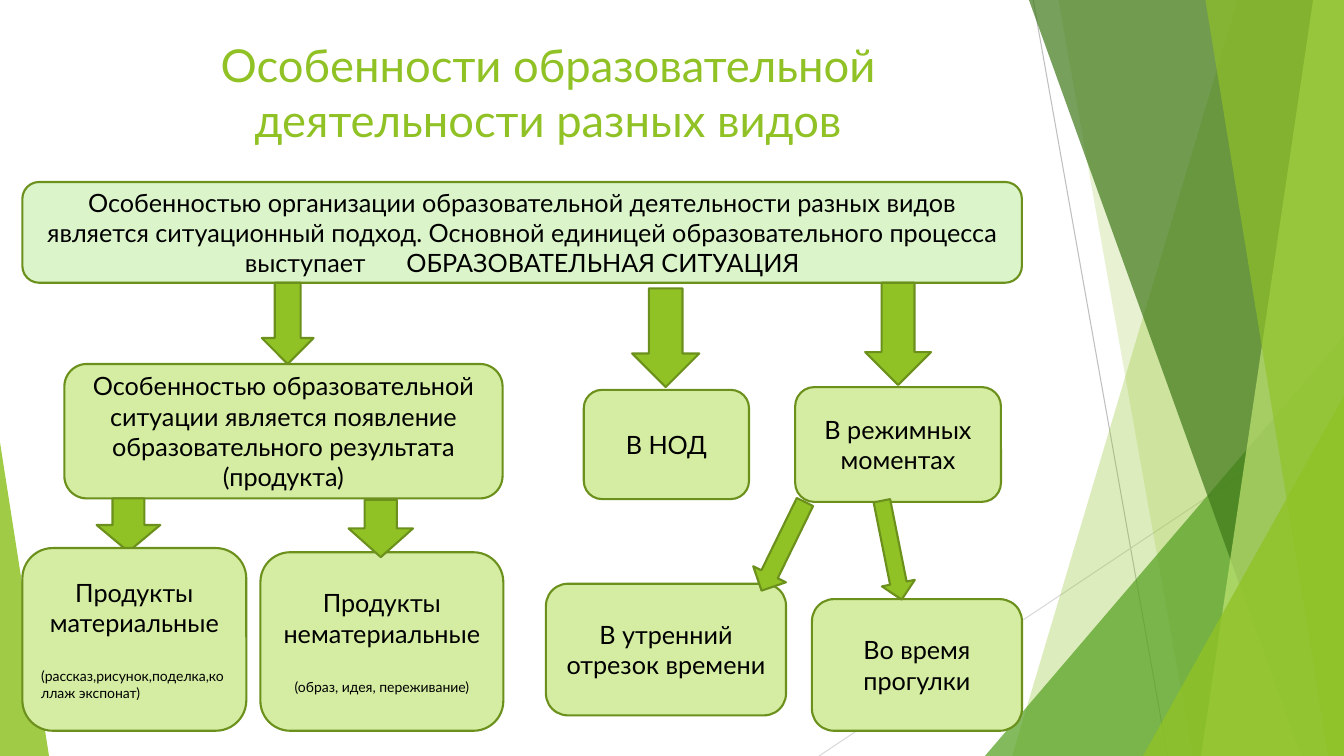
from dataclasses import dataclass
from typing import Any

from lxml import etree
from pptx import Presentation
from pptx.dml.color import RGBColor
from pptx.enum import shapes as sh, text as tx
from pptx.oxml import ns
from pptx.util import Pt

FONT = "Lato"
LEAF = RGBColor(0x90, 0xC2, 0x26)
MOSS = RGBColor(0x6B, 0x90, 0x1C)
LIME = RGBColor(0xD5, 0xED, 0xA2)
MINT = RGBColor(0xDB, 0xF4, 0xCA)
GRASS = RGBColor(0x54, 0xA0, 0x21)
PINE = RGBColor(0x3F, 0x78, 0x19)
PALE = RGBColor(0xC0, 0xE4, 0x74)
GREY = RGBColor(0xBF, 0xBF, 0xBF)
MIST = RGBColor(0xD9, 0xD9, 0xD9)
BLACK = RGBColor(0, 0, 0)
WIDE, HIGH = 960, 540
MID, JUST = tx.PP_ALIGN.CENTER, tx.PP_ALIGN.JUSTIFY
KIND = sh.MSO_SHAPE


@dataclass
class Ray:
    start: tuple[float, float]
    end: tuple[float, float]
    tint: RGBColor


@dataclass
class Band:
    top: float
    base: float
    tint: RGBColor
    alpha: int


@dataclass
class Wedge:
    left: float
    top: float
    width: float
    peak: float
    tint: RGBColor
    alpha: int


@dataclass
class Box:
    left: float
    top: float
    width: float
    height: float
    lines: tuple[str, ...]
    note: str = ""
    align: Any = MID
    tint: RGBColor = LIME


@dataclass
class Arrow:
    left: float
    top: float
    width: float
    height: float
    turn: float = 0


RAYS = [Ray((738, 0), (834, HIGH), GREY), Ray((WIDE, 290), (585, HIGH), MIST)]
DECOR = [
    Band(884, 723, LEAF, 30),
    Band(756, 852, LEAF, 20),
    Wedge(703.5, 240, 256.5, 1, GRASS, 72),
    Band(735, 929.5, PINE, 70),
    Band(938, 858, PALE, 70),
    Band(861, 949, LEAF, 65),
    Wedge(816.5, 283, 143.5, 1, LEAF, 80),
    Wedge(0, 316, 35, 0, LEAF, 85),
]
CHART = [
    Box(580, 428, 150, 94, ("Во время прогулки",)),
    Box(390, 417, 171.5, 94, ("В утренний отрезок времени",)),
    Box(568, 276.5, 147, 82, ("В режимных моментах",)),
    Box(16, 130, 714, 72, (
        "Особенностью организации образовательной деятельности разных видов "
        "является ситуационный подход. Основной единицей образовательного "
        "процесса выступает\tОБРАЗОВАТЕЛЬНАЯ СИТУАЦИЯ",), tint=MINT),
    Box(186, 394.5, 173.5, 127.5, ("Продукты нематериальные",),
        "(образ, идея, переживание)"),
    Arrow(187, 202, 37, 58),
    Box(46, 260, 313, 96, (
        "Особенностью образовательной ситуации является появление "
        "образовательного результата", "(продукта)")),
    Arrow(69, 356, 45.5, 38),
    Box(16, 391.5, 160, 130.5, ("Продукты материальные",),
        "(рассказ,рисунок,поделка,коллаж экспонат)", JUST),
    Arrow(249, 357, 46, 41),
    Arrow(451.5, 206, 48, 70.5),
    Arrow(618, 202, 47, 73),
    Box(417, 278.5, 118, 78, ("В НОД",)),
    Arrow(546.5, 355, 26, 70.5, 26.1),
    Arrow(625, 357, 24, 72, 348.7),
]


def put(thing: Any, form: dict[str, Any]) -> None:
    for name, value in form.items():
        setattr(thing, name, value)


def paint(shape: Any, tint: RGBColor, alpha: int = 100) -> None:
    shape.shadow.inherit = False
    shape.fill.solid()
    shape.fill.fore_color.rgb = tint
    if alpha < 100:
        tone = shape.fill._xPr.find(".//" + ns.qn("a:srgbClr"))
        etree.SubElement(tone, ns.qn("a:alpha"), val=str(alpha * 1000))


def edge(shape: Any, tint: RGBColor, width: float) -> None:
    shape.line.color.rgb = tint
    shape.line.width = Pt(width)


def add(slide: Any, kind: Any, left: float, top: float, width: float, height: float) -> Any:
    return slide.shapes.add_shape(kind, Pt(left), Pt(top), Pt(width), Pt(height))


def write(para: Any, words: str, size: float, tint: RGBColor, form: dict[str, Any]) -> None:
    put(para, form)
    for rank, part in enumerate(words.split("\t")):
        for piece in ([" ", part] if rank else [part]):
            run = para.add_run()
            run.text = piece
            put(run.font, {"name": FONT, "size": Pt(size)})
            run.font.color.rgb = tint
            if piece == " ":
                run._r.get_or_add_rPr().set("spc", "2440")


def draw_ray(slide: Any, ray: Ray) -> None:
    ends = [Pt(value) for value in (*ray.start, *ray.end)]
    line = slide.shapes.add_connector(sh.MSO_CONNECTOR.STRAIGHT, *ends)
    edge(line, ray.tint, 0.75)
    etree.SubElement(line._element.spPr, ns.qn("a:effectLst"))


def draw_decor(slide: Any, part: Band | Wedge) -> None:
    if isinstance(part, Band):
        pen = slide.shapes.build_freeform(Pt(part.top), 0, scale=1.0)
        spots = [(WIDE, 0), (WIDE, HIGH), (part.base, HIGH)]
        pen.add_line_segments([(Pt(x), Pt(y)) for x, y in spots], close=True)
        shape = pen.convert_to_shape()
    else:
        shape = add(slide, KIND.ISOSCELES_TRIANGLE, part.left, part.top,
                    part.width, HIGH - part.top)
        shape.adjustments[0] = part.peak
    paint(shape, part.tint, part.alpha)
    shape.line.fill.background()


def draw_box(slide: Any, box: Box) -> None:
    shape = add(slide, KIND.ROUNDED_RECTANGLE, box.left, box.top, box.width, box.height)
    paint(shape, box.tint)
    edge(shape, MOSS, 1.5)
    frame = shape.text_frame
    put(frame, {"word_wrap": True, "vertical_anchor": tx.MSO_ANCHOR.MIDDLE})
    for rank, words in enumerate(box.lines):
        para = frame.add_paragraph() if rank else frame.paragraphs[0]
        write(para, words, 18, BLACK, {"alignment": MID})
    if box.note:
        write(frame.add_paragraph(), box.note, 10, BLACK,
              {"alignment": box.align, "space_before": Pt(21.6)})


def draw_arrow(slide: Any, arrow: Arrow) -> None:
    shape = add(slide, KIND.DOWN_ARROW, arrow.left, arrow.top, arrow.width, arrow.height)
    shape.rotation = arrow.turn
    paint(shape, LEAF)
    edge(shape, MOSS, 1.5)


def draw_title(slide: Any) -> None:
    title = slide.shapes.title
    put(title, {"left": Pt(53), "top": Pt(23), "width": Pt(677), "height": Pt(78)})
    put(title.text_frame, {"word_wrap": True, "auto_size": tx.MSO_AUTO_SIZE.NONE,
                           "vertical_anchor": tx.MSO_ANCHOR.TOP})
    write(title.text_frame.paragraphs[0],
          "Особенности образовательной деятельности разных видов",
          32.4, LEAF, {"alignment": MID})


def main() -> None:
    deck = Presentation()
    put(deck, {"slide_width": Pt(WIDE), "slide_height": Pt(HIGH)})
    slide = deck.slides.add_slide(deck.slide_layouts.get_by_name("Title Only"))
    draw_title(slide)
    for ray in RAYS:
        draw_ray(slide, ray)
    for part in DECOR:
        draw_decor(slide, part)
    for item in CHART:
        if isinstance(item, Box):
            draw_box(slide, item)
        else:
            draw_arrow(slide, item)
    deck.save("out.pptx")


if __name__ == "__main__":
    main()
